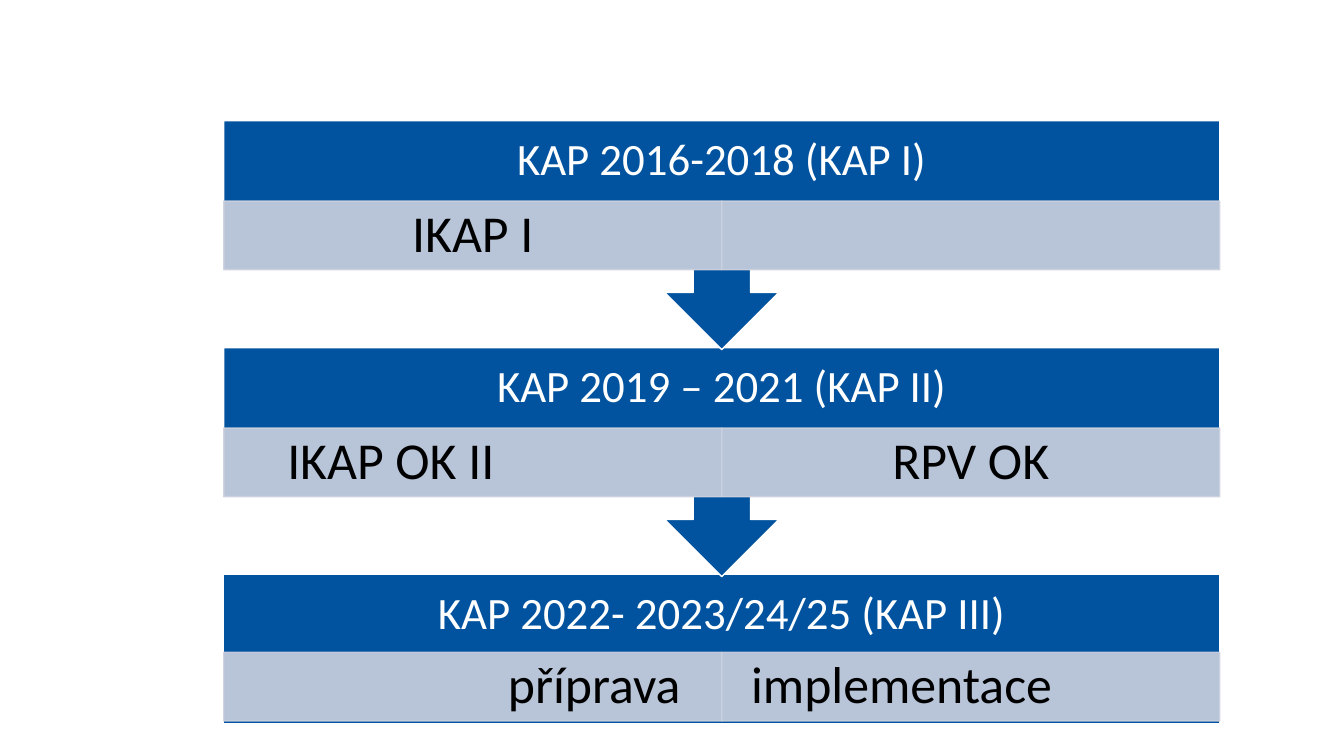
from dataclasses import dataclass

from lxml import etree
from pptx import Presentation
from pptx.dml.color import RGBColor
from pptx.enum.shapes import MSO_SHAPE
from pptx.enum.text import MSO_ANCHOR, PP_ALIGN
from pptx.oxml.ns import qn
from pptx.util import Cm, Pt

RECTANGLE = MSO_SHAPE.RECTANGLE
ARROW_CALLOUT = MSO_SHAPE.UP_ARROW_CALLOUT
MIDDLE = MSO_ANCHOR.MIDDLE
LEFT, CENTER, RIGHT = PP_ALIGN.LEFT, PP_ALIGN.CENTER, PP_ALIGN.RIGHT


@dataclass(frozen=True)
class Theme:
    font: str = "Calibri"
    period_size: int = 32
    project_size: int = 37
    blue: RGBColor = RGBColor(0x02, 0x53, 0x9F)
    pale: RGBColor = RGBColor(0xCC, 0xD1, 0xDF)
    white: RGBColor = RGBColor(0xFF, 0xFF, 0xFF)
    black: RGBColor = RGBColor(0x00, 0x00, 0x00)
    pale_opacity: int = 90


THEME = Theme()

STAGE_LEFT, STAGE_TOP, STAGE_WIDTH = 5.64, 3.04, 25.1
STAGE_PITCH = 5.72
CALLOUT_HEIGHT, LAST_HEIGHT = 5.77, 3.76
PERIOD_HEIGHT = 2.03
PROJECT_OFFSET, LAST_PROJECT_OFFSET = 2.03, 1.96
PROJECT_WIDTH, PROJECT_HEIGHT = STAGE_WIDTH / 2, 1.73
PERIOD_INSET, PROJECT_INSET = 0.63, 0.74

STAGES = [
    ("KAP 2016-2018 (KAP I)",
     [("IKAP I", CENTER, PROJECT_INSET), ("", CENTER, PROJECT_INSET)]),
    ("KAP 2019 – 2021 (KAP II)",
     [("IKAP OK II", LEFT, 1.6), ("RPV OK", CENTER, PROJECT_INSET)]),
    ("KAP 2022- 2023/24/25 (KAP III)",
     [("příprava", RIGHT, 1.04), ("implementace", LEFT, PROJECT_INSET)]),
]


def add_block(slide, kind, box, fill, line):
    shape = slide.shapes.add_shape(kind, *map(Cm, box))
    shape.shadow.inherit = False
    shape.fill.solid()
    shape.fill.fore_color.rgb = fill
    shape.line.color.rgb = line
    shape.line.width = Pt(1)
    return shape


def set_opacity(shape, percent):
    for color in shape._element.spPr.iter(qn("a:srgbClr")):
        etree.SubElement(color, qn("a:alpha")).set("val", str(percent * 1000))


def write_text(shape, text, size, color, alignment, inset):
    text_frame = shape.text_frame
    text_frame.word_wrap = True
    text_frame.vertical_anchor = MIDDLE
    text_frame.margin_left = text_frame.margin_right = Cm(inset)
    text_frame.margin_top = text_frame.margin_bottom = Cm(0.13)
    text_frame.text = text
    paragraph = text_frame.paragraphs[0]
    paragraph.alignment = alignment
    paragraph.line_spacing = 0.9
    for run in paragraph.runs:
        run.font.name = THEME.font
        run.font.size = Pt(size)
        run.font.color.rgb = color


def add_period(slide, top, text):
    box = (STAGE_LEFT, top, STAGE_WIDTH, PERIOD_HEIGHT)
    shape = slide.shapes.add_textbox(*map(Cm, box))
    write_text(shape, text, THEME.period_size, THEME.white, CENTER, PERIOD_INSET)


def add_project(slide, left, top, text, alignment, inset):
    box = (left, top, PROJECT_WIDTH, PROJECT_HEIGHT)
    shape = add_block(slide, RECTANGLE, box, THEME.pale, THEME.pale)
    set_opacity(shape, THEME.pale_opacity)
    if text:
        write_text(shape, text, THEME.project_size, THEME.black, alignment, inset)


def add_stage(slide, top, period, projects, is_last):
    kind = RECTANGLE if is_last else ARROW_CALLOUT
    height = LAST_HEIGHT if is_last else CALLOUT_HEIGHT
    box = (STAGE_LEFT, top, STAGE_WIDTH, height)
    background = add_block(slide, kind, box, THEME.blue, THEME.white)
    if not is_last:
        background.rotation = 180
    add_period(slide, top, period)
    project_top = top + (LAST_PROJECT_OFFSET if is_last else PROJECT_OFFSET)
    for column, project in enumerate(projects):
        left = STAGE_LEFT + column * PROJECT_WIDTH
        add_project(slide, left, project_top, *project)


def main():
    presentation = Presentation()
    presentation.slide_width = Cm(33.87)
    presentation.slide_height = Cm(19.05)
    slide = presentation.slides.add_slide(presentation.slide_layouts[6])
    last = len(STAGES) - 1
    for index in range(last, -1, -1):
        period, projects = STAGES[index]
        top = STAGE_TOP + index * STAGE_PITCH
        add_stage(slide, top, period, projects, index == last)
    presentation.save("out.pptx")


if __name__ == "__main__":
    main()
